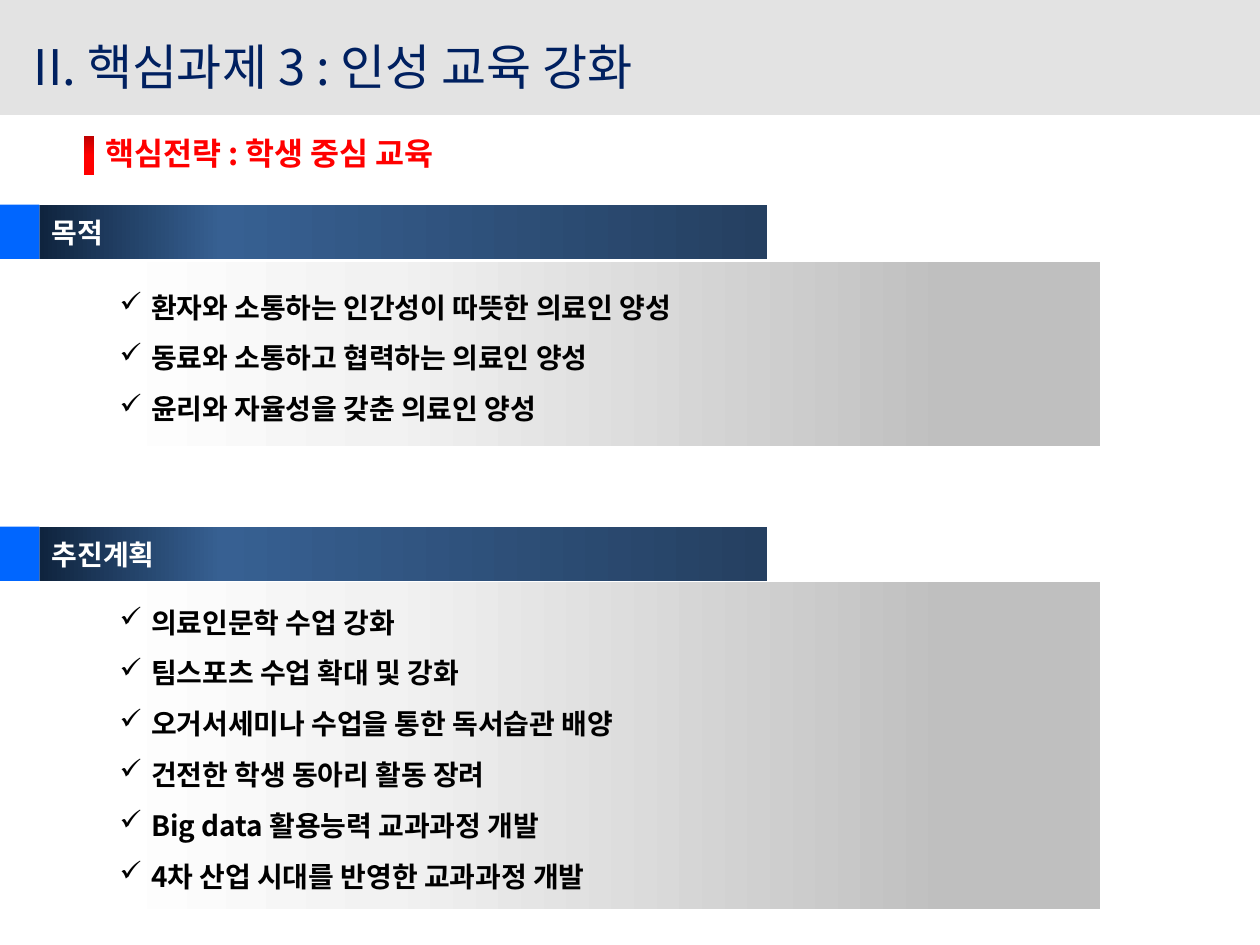
from dataclasses import dataclass

from lxml.etree import SubElement
from pptx import Presentation
from pptx.dml.color import RGBColor
from pptx.enum.shapes import MSO_SHAPE as Shape
from pptx.enum.text import MSO_ANCHOR as Anchor, PP_ALIGN as Align
from pptx.oxml.ns import qn
from pptx.util import Pt


@dataclass(frozen=True)
class Theme:
    face: str = "Noto Sans CJK KR"
    navy: str = "002060"
    red: str = "FF0000"
    white: str = "FFFFFF"
    black: str = "000000"
    band: str = "DDDDDD"
    blue: str = "0066FF"
    bar: tuple = ((0, "0F243E"), (25, "376092"), (100, "254061"))
    panel: tuple = ((0, "FFFFFF"), (28, "F2F2F2"), (85, "BFBFBF"))
    mark: tuple = ((0, "C00000"), (50, "FF0000"), (100, "FF0000"))
    title: int = 28
    lead: int = 18
    body: int = 16


T = Theme()


def add_rect(slide, box):
    rect = slide.shapes.add_shape(Shape.RECTANGLE, *map(Pt, box))
    rect.shadow.inherit = False
    rect.line.fill.background()
    return rect


def paint(rect, color, alpha=100):
    rect.fill.solid()
    rect.fill.fore_color.rgb = RGBColor.from_string(color)
    if alpha < 100:
        clr = rect.fill._xPr.find(f".//{qn('a:srgbClr')}")
        SubElement(clr, qn("a:alpha"), val=str(alpha * 1000))


def blend(rect, stops, angle=0):
    rect.fill.gradient()
    grad = rect.fill._xPr.find(qn("a:gradFill"))
    items = grad.find(qn("a:gsLst"))
    for old in list(items):
        items.remove(old)
    for pos, color in stops:
        stop = SubElement(items, qn("a:gs"), pos=str(pos * 1000))
        SubElement(stop, qn("a:srgbClr"), val=color)
    grad.find(qn("a:lin")).set("ang", str(angle * 60000))


def write(shape, lines, size, color, bold=True, anchor=Anchor.MIDDLE, check=False):
    frame = shape.text_frame
    frame.word_wrap = True
    frame.vertical_anchor = anchor
    for i, line in enumerate(lines):
        para = frame.paragraphs[0] if i == 0 else frame.add_paragraph()
        para.text = line
        para.alignment = Align.LEFT
        if check:
            add_check(para)
        font = para.font
        font.size, font.bold, font.name = Pt(size), bold, T.face
        font.color.rgb = RGBColor.from_string(color)
        SubElement(font._element, qn("a:ea"), typeface=T.face)


def add_check(para):
    para.level = 1
    para.line_spacing = 1.2
    para.space_after = Pt(6)
    props = para._p.get_or_add_pPr()
    props.set("marL", str(Pt(18)))
    props.set("indent", str(-Pt(18)))
    SubElement(props, qn("a:buChar"), char="✓")


def add_header(slide, box, text):
    x, y, w, h = box
    paint(add_rect(slide, box), T.band, 80)
    title = slide.shapes.add_textbox(Pt(x + 12.25), Pt(y + 16.5), Pt(w - 12.25), Pt(42.5))
    write(title, [text], T.title, T.navy, bold=False)


def add_lead(slide, box, text):
    x, y, w, h = box
    blend(add_rect(slide, (x, y + 5, 6, 22)), T.mark, 90)
    label = slide.shapes.add_textbox(Pt(x + 5), Pt(y), Pt(w - 5), Pt(h))
    write(label, [text], T.lead, T.red, anchor=Anchor.TOP)


def add_section(slide, box, gap, head, items):
    x, y, w, h = box
    tab, bar, inset = 22.5, 31, 61.25

    # Panel with checked items
    panel = add_rect(slide, (x + inset, y + bar + gap, w - inset, h - bar - gap))
    blend(panel, T.panel)
    write(panel, items, T.body, T.black, check=True)

    # Heading bar and its tab
    title = add_rect(slide, (x + tab, y, 416, bar))
    blend(title, T.bar)
    write(title, [head], T.body, T.white)
    paint(add_rect(slide, (x, y, tab, bar)), T.blue)


def main():
    deck = Presentation()
    deck.slide_width, deck.slide_height = Pt(720), Pt(540)
    slide = deck.slides.add_slide(deck.slide_layouts[6])

    add_header(slide, (0, 0, 720, 65.75), "II. 핵심과제 3 : 인성 교육 강화")
    add_lead(slide, (48, 73, 515, 29), "핵심전략 : 학생 중심 교육")
    add_section(slide, (0, 117, 628.5, 138), 2, "목적", [
        "환자와 소통하는 인간성이 따뜻한 의료인 양성",
        "동료와 소통하고 협력하는 의료인 양성",
        "윤리와 자율성을 갖춘 의료인 양성",
    ])
    add_section(slide, (0, 301, 628.5, 218.5), 0.5, "추진계획", [
        "의료인문학 수업 강화",
        "팀스포츠 수업 확대 및 강화",
        "오거서세미나 수업을 통한 독서습관 배양",
        "건전한 학생 동아리 활동 장려",
        "Big data 활용능력 교과과정 개발",
        "4차 산업 시대를 반영한 교과과정 개발",
    ])
    deck.save("out.pptx")


if __name__ == "__main__":
    main()
